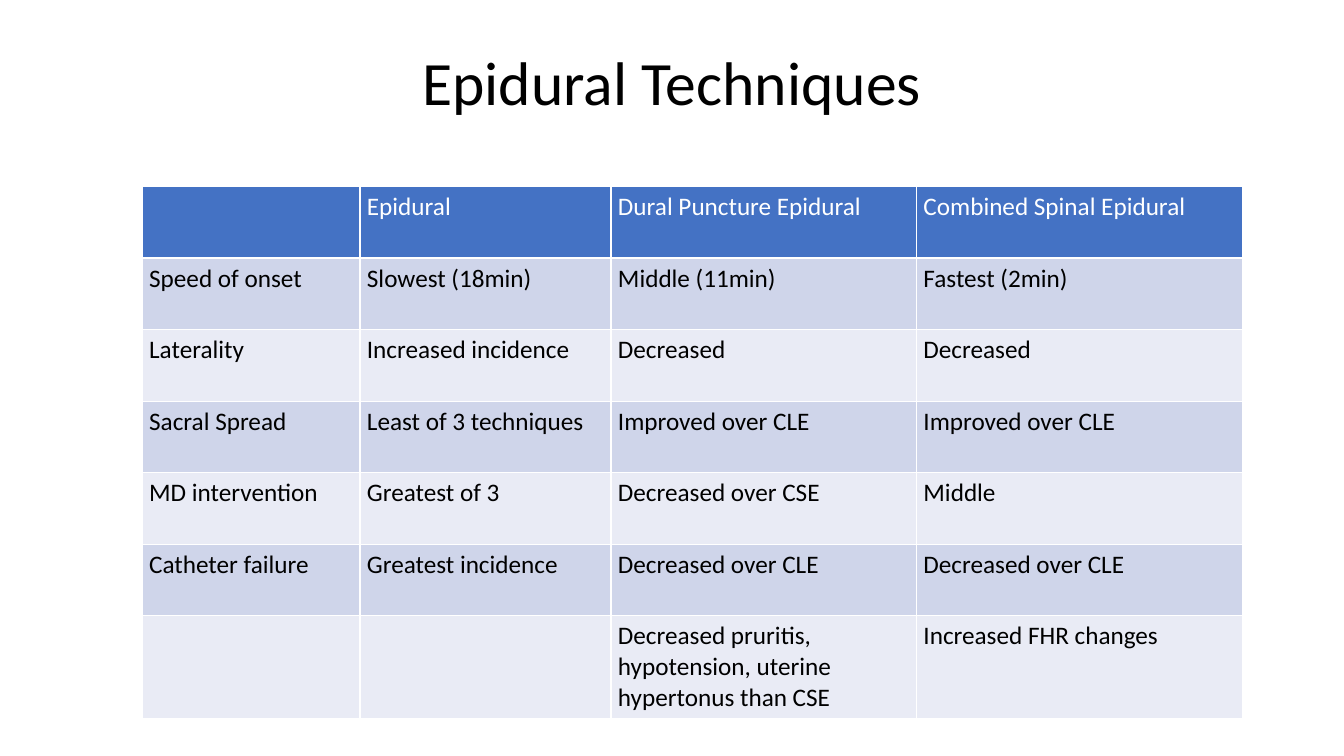
"""Build the slide that compares epidural techniques in a table."""
from pptx import Presentation
from pptx.dml.color import RGBColor
from pptx.enum.text import MSO_ANCHOR, PP_ALIGN
from pptx.util import Inches, Pt

TITLE = "Epidural Techniques"
ROWS = [
    ("", "Epidural", "Dural Puncture Epidural", "Combined Spinal Epidural"),
    ("Speed of onset", "Slowest (18min)", "Middle (11min)", "Fastest (2min)"),
    ("Laterality", "Increased incidence", "Decreased", "Decreased"),
    ("Sacral Spread", "Least of 3 techniques", "Improved over CLE", "Improved over CLE"),
    ("MD intervention", "Greatest of 3", "Decreased over CSE", "Middle"),
    ("Catheter failure", "Greatest incidence", "Decreased over CLE", "Decreased over CLE"),
    ("", "", "Decreased pruritis, hypotension, uterine hypertonus than CSE",
     "Increased FHR changes"),
]
WIDTHS = [2.16, 2.49, 3.03, 3.23]
HEIGHTS = [0.71] * (len(ROWS) - 1) + [1.02]
BLACK = RGBColor(0x00, 0x00, 0x00)
WHITE = RGBColor(0xFF, 0xFF, 0xFF)
BLUE = RGBColor(0x44, 0x72, 0xC4)
BANDS = [RGBColor(0xE9, 0xEB, 0xF5), RGBColor(0xCF, 0xD5, 0xEA)]
FONT = {"name": "Calibri", "bold": False}
INSETS = {"margin_left": Inches(0.07), "margin_right": Inches(0.07),
          "margin_top": Inches(0.05), "margin_bottom": Inches(0.05)}


def apply(item, values):
    """Set each named attribute of the item."""
    for name, value in values.items():
        setattr(item, name, value)


def add_title(slide):
    """Place and format the title."""
    title = slide.shapes.title
    apply(title, {"left": Inches(2.44), "top": Inches(0.2),
                  "width": Inches(8.45), "height": Inches(1.3)})
    title.text_frame.text = TITLE
    title.text_frame.vertical_anchor = MSO_ANCHOR.MIDDLE
    line = title.text_frame.paragraphs[0]
    apply(line, {"alignment": PP_ALIGN.CENTER, "line_spacing": 0.9})
    apply(line.runs[0].font, FONT | {"size": Pt(44)})
    line.runs[0].font.color.rgb = BLACK


def add_grid(slide):
    """Add the table with a blue header and banded rows."""
    grid = slide.shapes.add_table(
        len(ROWS), len(WIDTHS), Inches(1.41), Inches(1.85),
        Inches(sum(WIDTHS)), Inches(sum(HEIGHTS))).table
    for column, width in zip(grid.columns, WIDTHS):
        column.width = Inches(width)
    for r, (texts, height) in enumerate(zip(ROWS, HEIGHTS)):
        grid.rows[r].height = Inches(height)
        fill, ink = (BANDS[r % 2], BLACK) if r else (BLUE, WHITE)
        for c, text in enumerate(texts):
            cell = grid.cell(r, c)
            apply(cell, INSETS)
            cell.fill.solid()
            cell.fill.fore_color.rgb = fill
            if text:
                cell.text = text
                font = cell.text_frame.paragraphs[0].runs[0].font
                apply(font, FONT | {"size": Pt(18)})
                font.color.rgb = ink


def main():
    """Create and save the slide."""
    deck = Presentation()
    apply(deck, {"slide_width": Inches(13.33), "slide_height": Inches(7.5)})
    slide = deck.slides.add_slide(deck.slide_layouts[5])
    add_title(slide)
    add_grid(slide)
    deck.save("out.pptx")


if __name__ == "__main__":
    main()
